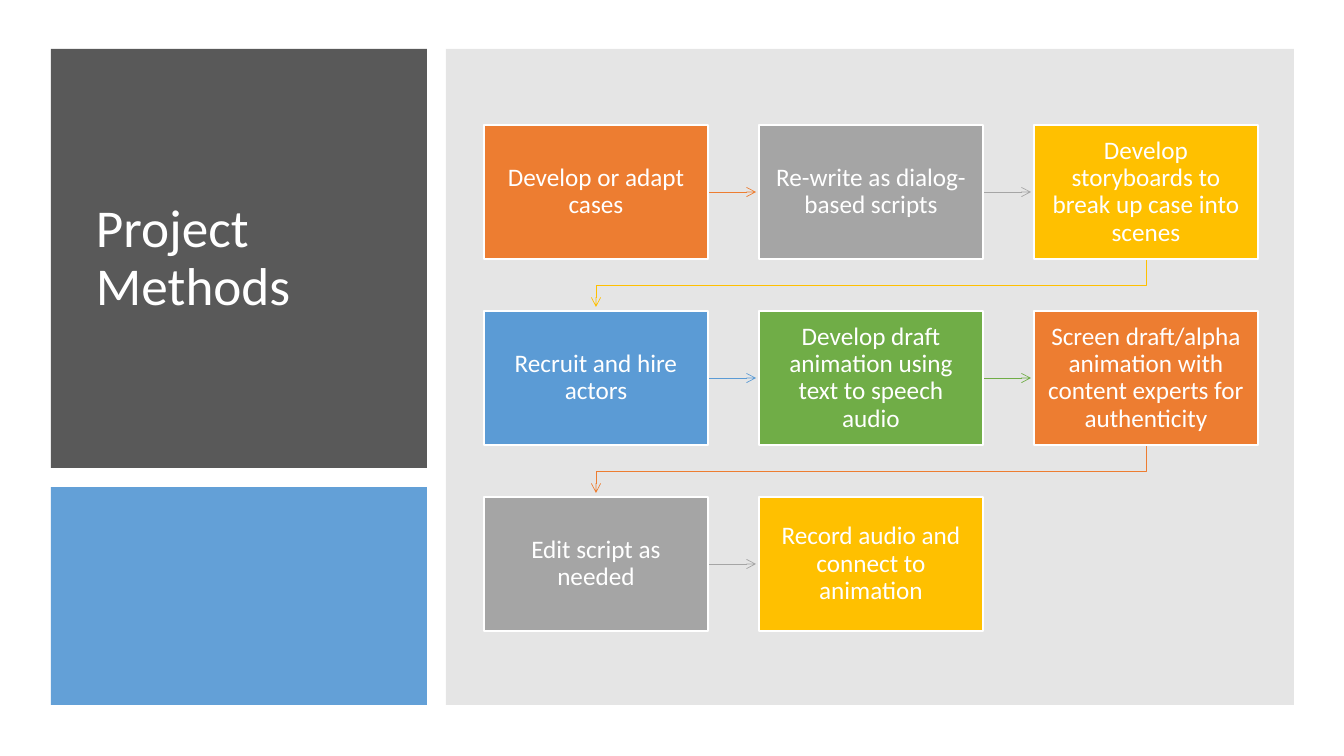
from pptx import Presentation
from pptx.dml.color import RGBColor
from pptx.enum.shapes import MSO_CONNECTOR, MSO_SHAPE
from pptx.enum.text import MSO_ANCHOR, PP_ALIGN
from pptx.oxml.ns import qn
from pptx.util import Pt
from lxml.etree import SubElement

SCALE = 914400 / 100.8  # EMU per px

COLORS = {
    "white": "FFFFFF", "dark": "595959", "panel": "808080",
    "orange": "ED7D31", "gray": "A5A5A5", "yellow": "FFC000",
    "blue": "5B9BD5", "green": "70AD47",
}

# Process steps in reading order
STEPS = [
    ("Develop or adapt cases", "orange"),
    ("Re-write as dialog-based scripts", "gray"),
    ("Develop storyboards to break up case into scenes", "yellow"),
    ("Recruit and hire actors", "blue"),
    ("Develop draft animation using text to speech audio", "green"),
    ("Screen draft/alpha animation with content experts for authenticity", "orange"),
    ("Edit script as needed", "gray"),
    ("Record audio and connect to animation", "yellow"),
]
COLS = 3
LEFT, TOP = 484, 125
BOX_W, BOX_H = 224, 134
PITCH_X, PITCH_Y = 275, 186
ARROW = 48

STEP_FORMAT = {"margin_left": 11, "margin_right": 11, "margin_top": 11, "margin_bottom": 11}
TITLE_FORMAT = {"margin_left": 10, "margin_right": 10, "margin_top": 5, "margin_bottom": 5}


def px(n):
    return round(n * SCALE)


def rgb(name):
    return RGBColor.from_string(COLORS[name])


def add_rect(s, x, y, w, h, color, alpha=100):
    sp = s.shapes.add_shape(MSO_SHAPE.RECTANGLE, px(x), px(y), px(w), px(h))
    sp.shadow.inherit = False
    sp.fill.solid()
    sp.fill.fore_color.rgb = rgb(color)
    sp.line.fill.background()
    if alpha < 100:
        clr = sp._element.spPr.find(qn("a:solidFill")).find(qn("a:srgbClr"))
        SubElement(clr, qn("a:alpha"), val=str(alpha * 1000))
    return sp


def set_text(sp, text, size, align, margins):
    tf = sp.text_frame
    tf.word_wrap = True
    tf.vertical_anchor = MSO_ANCHOR.MIDDLE
    for name, value in margins.items():
        setattr(tf, name, px(value))
    p = tf.paragraphs[0]
    p.alignment = align
    p.line_spacing = 0.9
    r = p.add_run()
    r.text = text
    for name, value in {"name": "Calibri", "size": Pt(size)}.items():
        setattr(r.font, name, value)
    r.font.color.rgb = rgb("white")


def style_arrow(sp, color):
    sp.line.color.rgb = rgb(color)
    sp.line.width = Pt(0.5)
    SubElement(sp.line._get_or_add_ln(), qn("a:tailEnd"), type="arrow")
    SubElement(sp._element.spPr, qn("a:effectLst"))


def add_straight_arrow(s, x, y, color):
    sp = s.shapes.add_connector(MSO_CONNECTOR.STRAIGHT, px(x), px(y), px(x + ARROW), px(y))
    style_arrow(sp, color)


def add_return_arrow(s, x, y, color):
    """Down from the last box of a row, back to the first box of the next."""
    first_x = LEFT + BOX_W // 2
    mid_y = y + (PITCH_Y - BOX_H) // 2
    fb = s.shapes.build_freeform(px(x), px(y))
    points = [(x, mid_y), (first_x, mid_y), (first_x, y + ARROW)]
    fb.add_line_segments([(px(a), px(b)) for a, b in points], close=False)
    sp = fb.convert_to_shape()
    sp.fill.background()
    style_arrow(sp, color)


def add_step(s, i, text, color):
    row, col = divmod(i, COLS)
    x, y = LEFT + col * PITCH_X, TOP + row * PITCH_Y
    if i < len(STEPS) - 1:
        if col < COLS - 1:
            add_straight_arrow(s, x + BOX_W, y + BOX_H // 2, color)
        else:
            add_return_arrow(s, x + BOX_W // 2, y + BOX_H, color)
    sp = add_rect(s, x, y, BOX_W, BOX_H, color)
    sp.line.color.rgb = rgb("white")
    sp.line.width = Pt(1)
    set_text(sp, text, 18, PP_ALIGN.CENTER, STEP_FORMAT)


def main():
    prs = Presentation()
    prs.slide_width, prs.slide_height = px(1344), px(756)
    s = prs.slides.add_slide(prs.slide_layouts[6])

    # Title block
    add_rect(s, 51, 49, 376, 419, "dark")
    title = s.shapes.add_textbox(px(86), px(81), px(313), px(357))
    set_text(title, "Project Methods", 38, PP_ALIGN.LEFT, TITLE_FORMAT)

    # Accent block and process panel
    add_rect(s, 51, 487, 376, 218, "blue", alpha=95)
    add_rect(s, 446, 49, 848, 656, "panel", alpha=20)

    # Process steps
    for i, (text, color) in enumerate(STEPS):
        add_step(s, i, text, color)

    prs.save("out.pptx")


if __name__ == "__main__":
    main()
